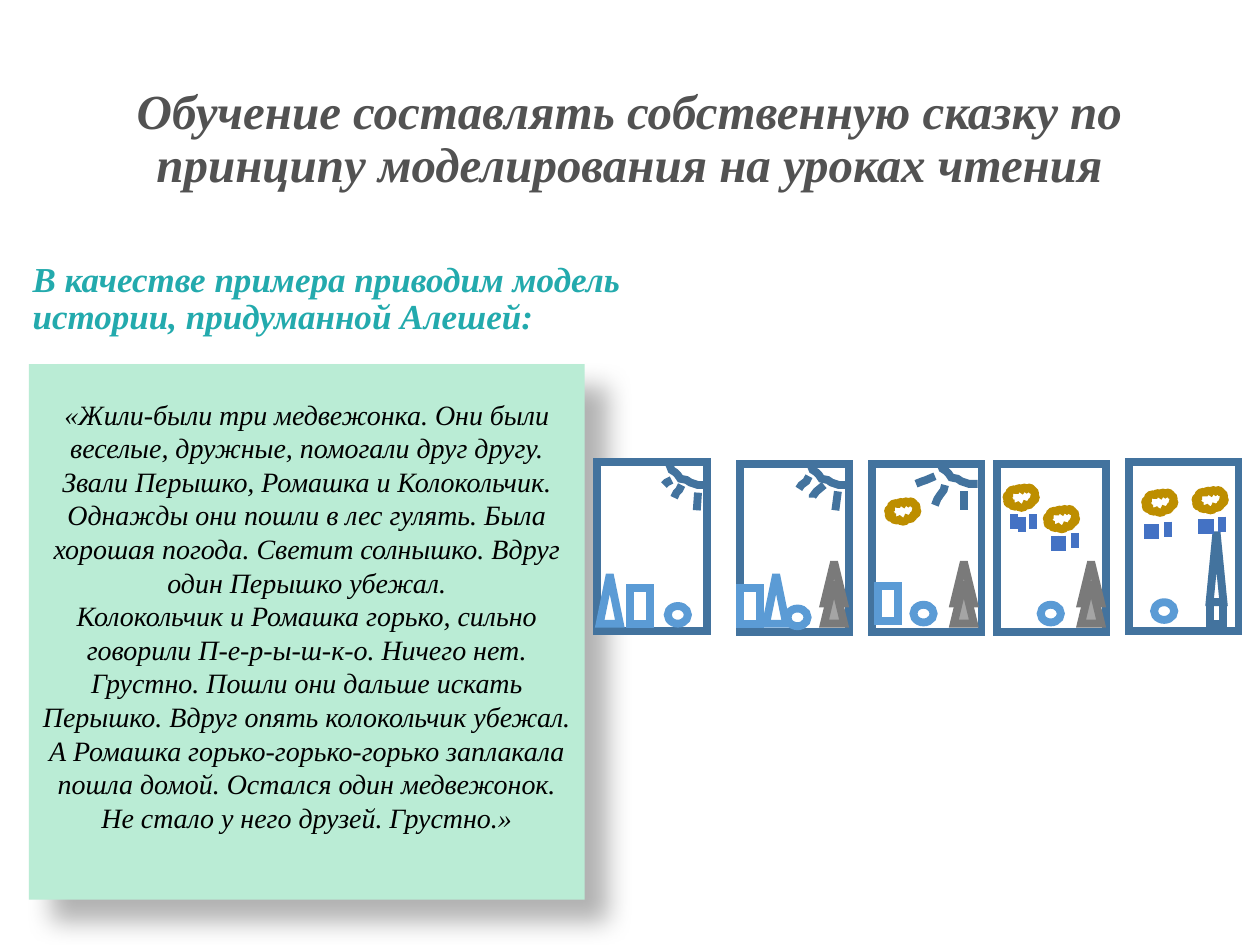
from lxml import etree
from pptx import Presentation
from pptx import oxml
from pptx.dml.color import RGBColor
from pptx.enum import shapes, text
from pptx.util import Inches, Pt

GREY = RGBColor(0x52, 0x52, 0x52)
TEAL = RGBColor(0x23, 0xAA, 0xAD)
MINT = RGBColor(0xBA, 0xEC, 0xD5)
BLACK = RGBColor(0, 0, 0)
WHITE = RGBColor(0xFF, 0xFF, 0xFF)
NAVY = RGBColor(0x43, 0x73, 0x9E)
SKY = RGBColor(0x5B, 0x9B, 0xD5)
BLUE = RGBColor(0x44, 0x72, 0xC4)
GOLD = RGBColor(0xBD, 0x8E, 0x00)
SILVER = RGBColor(0xA5, 0xA5, 0xA5)
DARK = RGBColor(0x7A, 0x7A, 0x7A)

TITLE = "Обучение составлять собственную сказку по принципу моделирования на уроках чтения"
LEAD = "В качестве примера приводим модель истории, придуманной Алешей:"
STORY = [
    "«Жили-были три медвежонка. Они были веселые, дружные, помогали друг другу. "
    "Звали Перышко, Ромашка и Колокольчик. Однажды они пошли в лес гулять. Была "
    "хорошая погода. Светит солнышко. Вдруг один Перышко убежал.",
    "Колокольчик и Ромашка горько, сильно говорили П-е-р-ы-ш-к-о. Ничего нет. "
    "Грустно. Пошли они дальше искать Перышко. Вдруг опять колокольчик убежал. "
    "А Ромашка горько-горько-горько заплакала пошла домой. Остался один "
    "медвежонок. Не стало у него друзей. Грустно.»",
]

KIND = shapes.MSO_SHAPE
FRAMES = [(4.74, 3.67), (5.87, 3.68), (6.92, 3.68), (7.91, 3.68), (8.96, 3.67)]
TREES = [(x, y) for x in (7.57, 6.54, 8.58) for y in (4.46, 4.62)]
GROUPS = [
    (KIND.ISOSCELES_TRIANGLE, 0.16, 0.39, SKY, WHITE, [(4.76, 4.56), (6.08, 4.56)]),
    (KIND.RECTANGLE, 0.16, 0.28, SKY, None, [(5, 4.67), (5.87, 4.67), (6.97, 4.65)]),
    (KIND.ISOSCELES_TRIANGLE, 0.16, 0.33, DARK, SILVER, TREES),
    (KIND.OVAL, 0.16, 0.14, SKY, None,
     [(5.3, 4.81), (6.25, 4.83), (7.25, 4.8), (8.26, 4.8), (9.16, 4.78)]),
    (KIND.CLOUD, 0.23, 0.16, GOLD, None,
     [(7.05, 3.98), (7.99, 3.87), (8.31, 4.04), (9.09, 3.91), (9.49, 3.89)]),
    (KIND.RECTANGLE, 0.11, 0.17, NAVY, None, [(9.6, 4.78)]),
    (KIND.ISOSCELES_TRIANGLE, 0.11, 0.56, NAVY, None, [(9.6, 4.22)]),
]
SUNS = [(5.31, 3.68), (6.43, 3.68), (7.46, 3.67)]
ARC = [(0, 0), (0.02, 0.05), (0.05, 0.07), (0.07, 0.09), (0.09, 0.12),
       (0.14, 0.13), (0.17, 0.15), (0.23, 0.17), (0.3, 0.17)]
RAYS = [
    [(5.33, 3.81), (5.29, 3.83), (5.27, 3.85)],
    [(5.41, 3.85), (5.39, 3.89), (5.37, 3.91), (5.35, 3.95)],
    [(6.42, 3.78), (6.4, 3.82), (6.36, 3.85), (6.34, 3.88)],
    [(6.54, 3.85), (6.48, 3.9), (6.45, 3.94), (6.45, 3.95)],
    [(7.42, 3.78), (7.35, 3.81), (7.32, 3.82), (7.27, 3.84)],
    [(7.5, 3.85), (7.49, 3.89), (7.46, 3.93), (7.44, 3.96), (7.42, 4.01)],
]
BEAMS = [(5.54, 3.91, 5.53, 4.05), (6.65, 3.9, 6.63, 4.05), (7.65, 3.9, 7.65, 4.05)]
DROPS = [(8.05, 4.08), (8.11, 4.1), (8.2, 4.08)]
DROPS += [(x + dx, y + dy) for x, y in ((8.37, 4.25), (9.11, 4.16), (9.54, 4.12))
          for dx, dy in ((0, 0), (0.06, 0), (0.16, -0.02))]

SHADOW = ('<a:effectLst xmlns:a="http://schemas.openxmlformats.org/drawingml/2006/main">'
          '<a:outerShdw blurRad="190500" dist="228600" dir="2700000" algn="tl" rotWithShape="0">'
          '<a:srgbClr val="000000"><a:alpha val="30000"/></a:srgbClr>'
          '</a:outerShdw></a:effectLst>')

deck = Presentation()
deck.slide_width, deck.slide_height = Inches(10), Inches(7.5)
slide = deck.slides.add_slide(deck.slide_layouts[6])
art = slide.shapes


def write(box, lines, size, tone, bold, align, anchor, gap=None):
    frame = box.text_frame
    frame.word_wrap = True
    frame.vertical_anchor = anchor
    frame.text = "\n".join(lines)
    for para in frame.paragraphs:
        para.alignment = align
        para.line_spacing = gap
        for run in para.runs:
            font = run.font
            font.name, font.size = "Times New Roman", Pt(size)
            font.bold, font.italic = bold, True
            font.color.rgb = tone


def stroke(item, tone):
    item.line.color.rgb = tone
    item.line.width = Pt(4.5)
    miter = etree.SubElement(item.line._get_or_add_ln(), oxml.ns.qn("a:miter"))
    miter.set("lim", "800000")


def paint(item, tone, fill):
    item.shadow.inherit = False
    if fill is None:
        item.fill.background()
    else:
        item.fill.solid()
        item.fill.fore_color.rgb = fill
    stroke(item, tone)


def stamp(kind, wide, high, tone, fill, spots):
    for x, y in spots:
        item = art.add_shape(kind, Inches(x), Inches(y), Inches(wide), Inches(high))
        paint(item, tone, fill)


def curve(points):
    spots = [(Inches(x), Inches(y)) for x, y in points]
    pen = art.build_freeform(*spots[0])
    pen.add_line_segments(spots[1:], close=False)
    paint(pen.convert_to_shape(), NAVY, None)


def dash(ends, tone):
    item = art.add_connector(shapes.MSO_CONNECTOR.STRAIGHT, *map(Inches, ends))
    stroke(item, tone)
    etree.SubElement(item._element.spPr, oxml.ns.qn("a:effectLst"))


MID, TOP = text.MSO_ANCHOR.MIDDLE, text.MSO_ANCHOR.TOP
LEFT, CENTER = text.PP_ALIGN.LEFT, text.PP_ALIGN.CENTER

head = art.add_textbox(Inches(0.43), Inches(0.36), Inches(9.13), Inches(1.5))
write(head, [TITLE], 28, GREY, True, CENTER, MID, 0.9)
lead = art.add_textbox(Inches(0.16), Inches(2.03), Inches(4.99), Inches(0.87))
write(lead, [LEAD], 20, TEAL, True, LEFT, TOP, 0.9)

card = art.add_shape(KIND.RECTANGLE, Inches(0.23), Inches(2.89), Inches(4.41), Inches(4.25))
card.fill.solid()
card.fill.fore_color.rgb = MINT
card.line.fill.background()
card._element.spPr.append(oxml.parse_xml(SHADOW))
write(card, STORY, 16, BLACK, False, CENTER, MID)
card.text_frame.margin_bottom = Inches(0.31)

stamp(KIND.RECTANGLE, 0.87, 1.34, NAVY, WHITE, FRAMES)
for x, y in SUNS:
    curve([(x + dx, y + dy) for dx, dy in ARC])
for ray in RAYS:
    curve(ray)
for beam in BEAMS:
    dash(beam, NAVY)
for group in GROUPS:
    stamp(*group)
for x, y in DROPS:
    dash((x, y, x, y + 0.12), BLUE)

deck.save("out.pptx")
